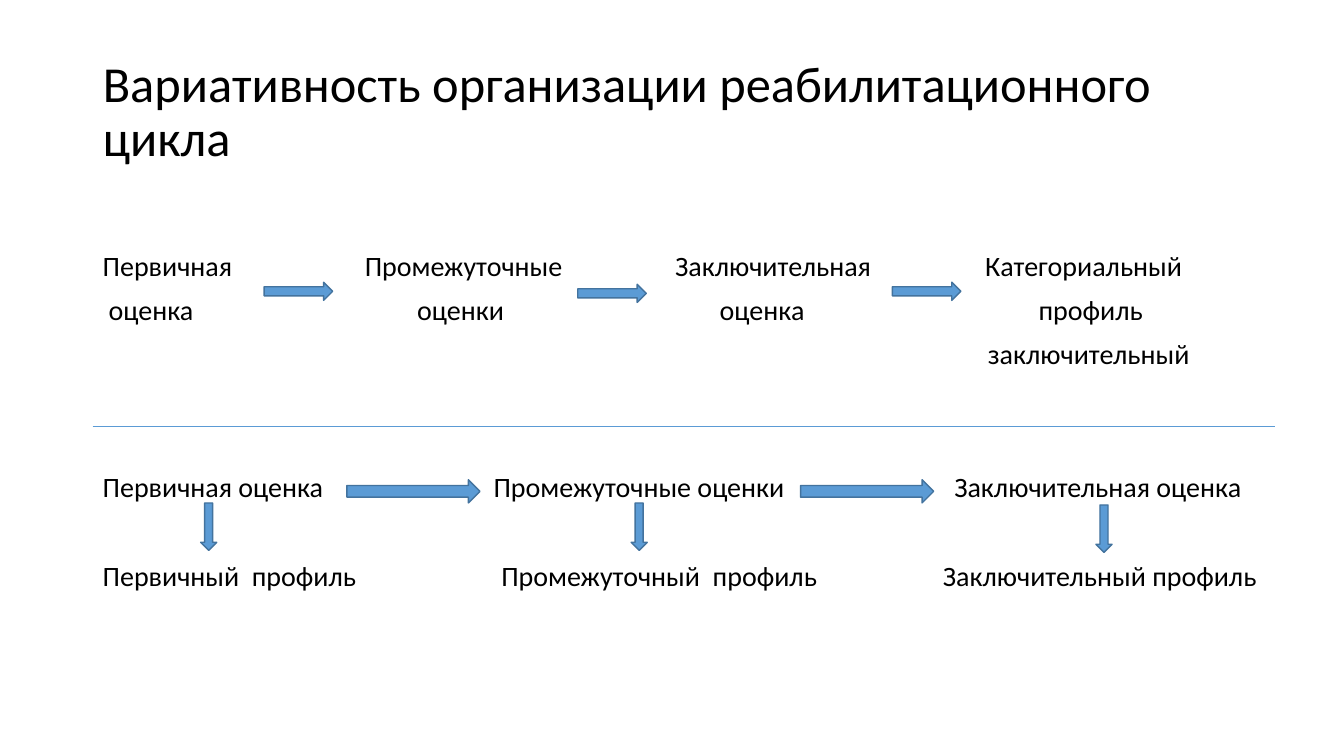
from dataclasses import dataclass

from lxml import etree
from pptx import Presentation
from pptx.dml.color import RGBColor
from pptx.enum import shapes, text
from pptx.oxml import ns
from pptx.util import Inches, Pt

BLACK = RGBColor(0x00, 0x00, 0x00)
BLUE = RGBColor(0x5B, 0x9B, 0xD5)
DARK_BLUE = RGBColor(0x43, 0x73, 0x9E)
FONT = "Calibri"
LEFT = 0.92


@dataclass(frozen=True)
class Row:
    """Cells joined by tabs; a stop is measured from the text edge."""
    cells: tuple[str, ...]
    stops: tuple[float, ...]
    space_before: float = 10
    first_stop: float | None = None  # left stop for a shifted first cell


@dataclass(frozen=True)
class ArrowKind:
    preset: shapes.MSO_SHAPE
    width: float
    height: float


@dataclass(frozen=True)
class Arrow:
    kind: ArrowKind
    left: float
    top: float


ROWS = (
    # One profile at the end of the cycle
    Row(("Первичная", "Промежуточные", "Заключительная", "Категориальный"),
        (3.58, 6.65, 9.73), space_before=0),
    Row(("оценка", "оценки", "оценка", "профиль"),
        (3.55, 6.54, 9.8), first_stop=0.06),
    Row(("", "заключительный"), (9.78,)),
    # A profile after every assessment
    Row(("Первичная оценка", "Промежуточные оценки", "Заключительная оценка"),
        (5.32, 9.87), space_before=73),
    Row(("Первичный  профиль", "Промежуточный  профиль", "Заключительный профиль"),
        (5.52, 9.89), space_before=42),
)

SHORT = ArrowKind(shapes.MSO_SHAPE.RIGHT_ARROW, 0.68, 0.18)
LONG = ArrowKind(shapes.MSO_SHAPE.RIGHT_ARROW, 1.32, 0.23)
DOWN = ArrowKind(shapes.MSO_SHAPE.DOWN_ARROW, 0.16, 0.47)
ARROWS = (
    Arrow(SHORT, 2.62, 2.8), Arrow(SHORT, 5.73, 2.82), Arrow(SHORT, 8.85, 2.8),
    Arrow(DOWN, 1.99, 4.99), Arrow(DOWN, 6.26, 4.99), Arrow(DOWN, 10.87, 5.01),
    Arrow(LONG, 3.44, 4.76), Arrow(LONG, 7.94, 4.76),
)


def place(box, left: float, top: float, width: float, height: float) -> None:
    box.left, box.top = Inches(left), Inches(top)
    box.width, box.height = Inches(width), Inches(height)
    box.text_frame.word_wrap = True
    box.text_frame.auto_size = text.MSO_AUTO_SIZE.NONE


def style(para, size: float, space_before: float = 0) -> None:
    para.alignment = text.PP_ALIGN.LEFT
    para.line_spacing = 0.9
    para.space_before = Pt(space_before)
    para.space_after = Pt(0)
    para.font.name = FONT
    para.font.size = Pt(size)
    para.font.color.rgb = BLACK


def write_row(para, row: Row) -> None:
    shifted = row.first_stop is not None
    para.text = ("\t" if shifted else "") + "\t".join(row.cells)
    tabs = etree.SubElement(para._p.get_or_add_pPr(), ns.qn("a:tabLst"))
    stops = [(row.first_stop, "l")] if shifted else []
    stops += [(stop, "ctr") for stop in row.stops]
    for position, align in stops:
        etree.SubElement(tabs, ns.qn("a:tab"), pos=str(Inches(position)), algn=align)
    style(para, 20, row.space_before)


def add_arrow(page, arrow: Arrow) -> None:
    kind = arrow.kind
    shape = page.shapes.add_shape(kind.preset, Inches(arrow.left), Inches(arrow.top),
                                  Inches(kind.width), Inches(kind.height))
    shape.shadow.inherit = False
    shape.fill.solid()
    shape.fill.fore_color.rgb = BLUE
    shape.line.color.rgb = DARK_BLUE
    shape.line.width = Pt(1)


def add_divider(page) -> None:
    y = Inches(4.23)
    line = page.shapes.add_connector(shapes.MSO_CONNECTOR.STRAIGHT,
                                     Inches(LEFT), y, Inches(12.65), y)
    line.line.color.rgb = BLUE
    line.line.width = Pt(0.5)
    etree.SubElement(line._element.spPr, ns.qn("a:effectLst"))


def main() -> None:
    deck = Presentation()
    deck.slide_width, deck.slide_height = Inches(13.33), Inches(7.5)
    page = deck.slides.add_slide(deck.slide_layouts[5])

    # Title
    title = page.shapes.title
    place(title, LEFT, 0.4, 11.5, 1.45)
    title.text_frame.vertical_anchor = text.MSO_ANCHOR.MIDDLE
    title.text_frame.text = "Вариативность организации реабилитационного цикла"
    style(title.text_frame.paragraphs[0], 36)

    # Labels of both cycles, as tabbed rows
    labels = page.shapes.add_textbox(0, 0, 0, 0)
    place(labels, LEFT, 1.85, 11.74, 4.76)
    frame = labels.text_frame
    frame.margin_top = Inches(0.65)
    for index, row in enumerate(ROWS):
        write_row(frame.add_paragraph() if index else frame.paragraphs[0], row)

    # Arrows and the line between the cycles
    add_divider(page)
    for arrow in ARROWS:
        add_arrow(page, arrow)

    deck.save("out.pptx")


if __name__ == "__main__":
    main()
